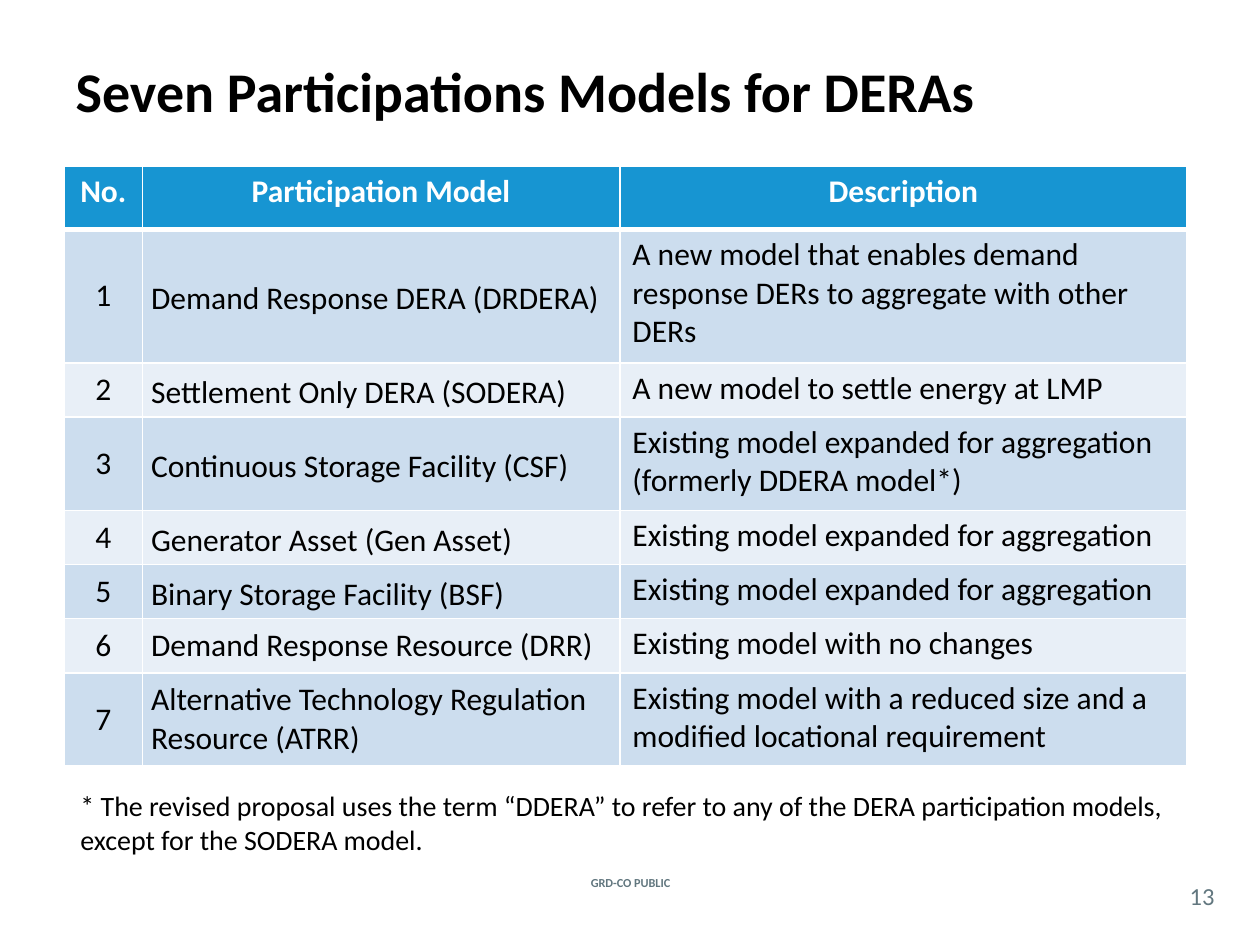
from lxml.etree import SubElement as Sub
from pptx import Presentation
from pptx.dml.color import RGBColor
from pptx.enum.text import MSO_ANCHOR as Anchor, PP_ALIGN as Align
from pptx.oxml.ns import qn
from pptx.util import Inches, Pt

BLACK = RGBColor(0, 0, 0)
WHITE = RGBColor(255, 255, 255)
GRAY = RGBColor(0x62, 0x77, 0x7F)
BLUE = RGBColor(0x17, 0x95, 0xD2)
BANDS = RGBColor(0xCC, 0xDD, 0xEE), RGBColor(0xE8, 0xEF, 0xF7)

WIDE, HIGH = Inches(10), Inches(7.5)
COLS = 0.62, 3.79, 4.5
ROWS = 0.5, 1.06, 0.43, 0.74, 0.43, 0.43, 0.43, 0.74
HEAD = "No.", "Participation Model", "Description"
SAME = "Existing model expanded for aggregation"
MODELS = [
    ("Demand Response DERA (DRDERA)",
     "A new model that enables demand response DERs to aggregate with other DERs"),
    ("Settlement Only DERA (SODERA)", "A new model to settle energy at LMP"),
    ("Continuous Storage Facility (CSF)", SAME + " (formerly DDERA model*)"),
    ("Generator Asset (Gen Asset)", SAME),
    ("Binary Storage Facility (BSF)", SAME),
    ("Demand Response Resource (DRR)", "Existing model with no changes"),
    ("Alternative Technology Regulation Resource (ATRR)",
     "Existing model with a reduced size and a modified locational requirement"),
]
LOOSE = 5
NOTE = ("* The revised proposal uses the term “DDERA” to refer to any of the "
        "DERA participation models, except for the SODERA model.")


def write(frame, text, size, color, bold=False, align=Align.LEFT):
    frame.text = text
    para = frame.paragraphs[0]
    para.alignment = align
    font = para.runs[0].font
    font.name, font.size, font.bold = "Calibri", Pt(size), bold
    font.color.rgb = color
    return para


def place(shape, x, y, w, h):
    shape.left, shape.top = int(x * WIDE), int(y * HIGH)
    shape.width, shape.height = int(w * WIDE), int(h * HIGH)


def add_title(slide, text):
    title = slide.shapes.title
    place(title, 0.05, 0.01, 0.9, 0.17)
    write(title.text_frame, text, 32, BLACK, True)
    title.text_frame.vertical_anchor = Anchor.MIDDLE


def add_label(slide, box, text, size, color, bold=False,
              align=Align.LEFT, anchor=Anchor.TOP, inset=True):
    label = slide.shapes.add_textbox(0, 0, 0, 0)
    place(label, *box)
    frame = label.text_frame
    frame.word_wrap = True
    frame.vertical_anchor = anchor
    if not inset:
        frame.margin_left = frame.margin_right = 0
        frame.margin_top = frame.margin_bottom = 0
    write(frame, text, size, color, bold, align)


def add_edges(cell, base):
    props = cell._tc.get_or_add_tcPr()
    for at, (side, width) in enumerate(zip("LRTB", (1, 1, 1, base))):
        line = Sub(props, qn(f"a:ln{side}"), w=str(Pt(width)))
        fill = Sub(line, qn("a:solidFill"))
        Sub(fill, qn("a:srgbClr"), val=str(WHITE))
        props.insert(at, line)


def fill_cell(cell, text, row, col):
    head = row == 0
    cell.fill.solid()
    cell.fill.fore_color.rgb = BLUE if head else BANDS[(row - 1) % 2]
    mid = Align.CENTER if head or col == 0 else Align.LEFT
    para = write(cell.text_frame, text, 18, WHITE if head else BLACK, head, mid)
    if not head and col < 2:
        cell.vertical_anchor = Anchor.MIDDLE
    if not head and col == 1:
        cell.margin_left = cell.margin_right = Inches(0.07)
        cell.margin_top = cell.margin_bottom = 0
        if row <= LOOSE:
            para.line_spacing = 1.15
    add_edges(cell, 3 if head else 1)


def add_grid(slide):
    data = [HEAD] + [(str(n), *pair) for n, pair in enumerate(MODELS, 1)]
    grid = slide.shapes.add_table(
        len(ROWS), len(COLS), Inches(0.51), Inches(1.32),
        Inches(sum(COLS)), Inches(sum(ROWS))).table
    for col, width in zip(grid.columns, COLS):
        col.width = Inches(width)
    for row, height in zip(grid.rows, ROWS):
        row.height = Inches(height)
    for r, texts in enumerate(data):
        for c, text in enumerate(texts):
            fill_cell(grid.cell(r, c), text, r, c)


def main():
    deck = Presentation()
    deck.slide_width, deck.slide_height = WIDE, HIGH
    slide = deck.slides.add_slide(deck.slide_layouts[5])
    add_label(slide, (0.427, 0.9, 0.147, 0.067), "GRD-CO PUBLIC", 7, GRAY,
              True, Align.CENTER, Anchor.MIDDLE)
    add_label(slide, (0.933, 0.928, 0.042, 0.039), "13", 14, GRAY,
              False, Align.CENTER, Anchor.MIDDLE, False)
    add_title(slide, "Seven Participations Models for DERAs")
    add_grid(slide)
    add_label(slide, (0.054, 0.828, 0.938, 0.085), NOTE, 16, BLACK)
    deck.save("out.pptx")


if __name__ == "__main__":
    main()
